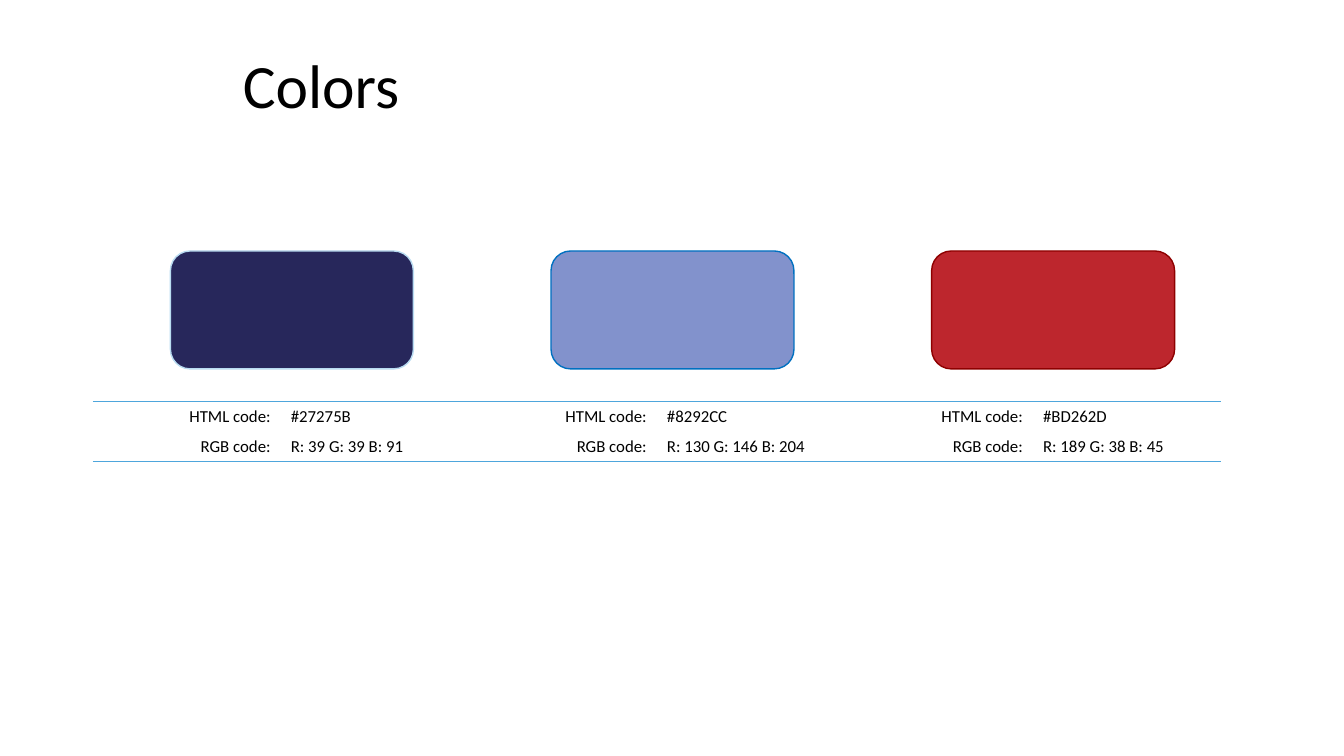
from lxml import etree
from pptx import Presentation
from pptx import util as u
from pptx.dml.color import RGBColor
from pptx.enum import shapes, text
from pptx.oxml.ns import qn

COLORS = {"text": "000000", "rule": "4EA6DC"}
SWATCHES = [
    ("27275B", "B8DBF1", "R: 39 G: 39 B: 91"),
    ("8292CC", "0070C0", "R: 130 G: 146 B: 204"),
    ("BD262D", "8E0000", "R: 189 G: 38 B: 45"),
]
PLAIN_TABLE = "{2D5ABB26-0587-4C30-8999-92F81FD0307C}"


class SlideBuilder:
    """Draws styled elements on the current slide."""

    def __init__(self, s, font="Calibri"):
        self.s = s
        self.font = font

    def add_text(self, tf, content, size, **paragraph_format):
        tf.word_wrap = True
        tf.vertical_anchor = text.MSO_ANCHOR.MIDDLE
        p = tf.paragraphs[0]
        for name, value in paragraph_format.items():
            setattr(p, name, value)
        r = p.add_run()
        r.text = content
        for name, value in {"name": self.font, "size": u.Pt(size)}.items():
            setattr(r.font, name, value)
        r.font.color.rgb = RGBColor.from_string(COLORS["text"])

    def title(self, content, *box):
        sp = self.s.shapes.add_textbox(*map(u.Inches, box))
        self.add_text(sp.text_frame, content, 44, line_spacing=0.9)

    def swatch(self, fill, line, *box):
        sp = self.s.shapes.add_shape(
            shapes.MSO_SHAPE.ROUNDED_RECTANGLE, *map(u.Inches, box))
        sp.shadow.inherit = False
        sp.fill.solid()
        sp.fill.fore_color.rgb = RGBColor.from_string(fill)
        sp.line.color.rgb = RGBColor.from_string(line)
        sp.line.width = u.Pt(1)

    def border(self, cell, side):
        ln = etree.Element(qn(f"a:{side}"), w=str(u.Pt(1)))
        fill = etree.SubElement(ln, qn("a:solidFill"))
        etree.SubElement(fill, qn("a:srgbClr"), val=COLORS["rule"])
        cell._tc.get_or_add_tcPr().insert(0, ln)

    def table(self, rows, *box):
        frame = self.s.shapes.add_table(
            len(rows), len(rows[0]), *map(u.Inches, box))
        tbl = frame.table
        tbl.first_row = tbl.horz_banding = False
        tbl._tbl.tblPr.find(qn("a:tableStyleId")).text = PLAIN_TABLE
        aligns = [text.PP_ALIGN.RIGHT, text.PP_ALIGN.LEFT]
        for i, row in enumerate(rows):
            for j, content in enumerate(row):
                cell = tbl.cell(i, j)
                cell.fill.background()
                cell.vertical_anchor = text.MSO_ANCHOR.MIDDLE
                self.add_text(cell.text_frame, content, 12, alignment=aligns[j % 2])
                if i == 0:
                    self.border(cell, "lnT")
                if i == len(rows) - 1:
                    self.border(cell, "lnB")


def main():
    prs = Presentation()
    prs.slide_width, prs.slide_height = u.Inches(13.33), u.Inches(7.5)
    b = SlideBuilder(prs.slides.add_slide(prs.slide_layouts[6]))
    b.title("Colors", 2.31, 0.4, 10.11, 0.95)
    html_row, rgb_row = [], []
    for i, (fill, line, rgb) in enumerate(SWATCHES):
        b.swatch(fill, line, 1.69 + i * 7.55 / 2, 2.49, 2.41, 1.17)
        html_row += ["HTML code:", f"#{fill}"]
        rgb_row += ["RGB code:", rgb]
    b.table([html_row, rgb_row], 0.92, 3.98, 11.19, 0.6)
    prs.save("out.pptx")


if __name__ == "__main__":
    main()
